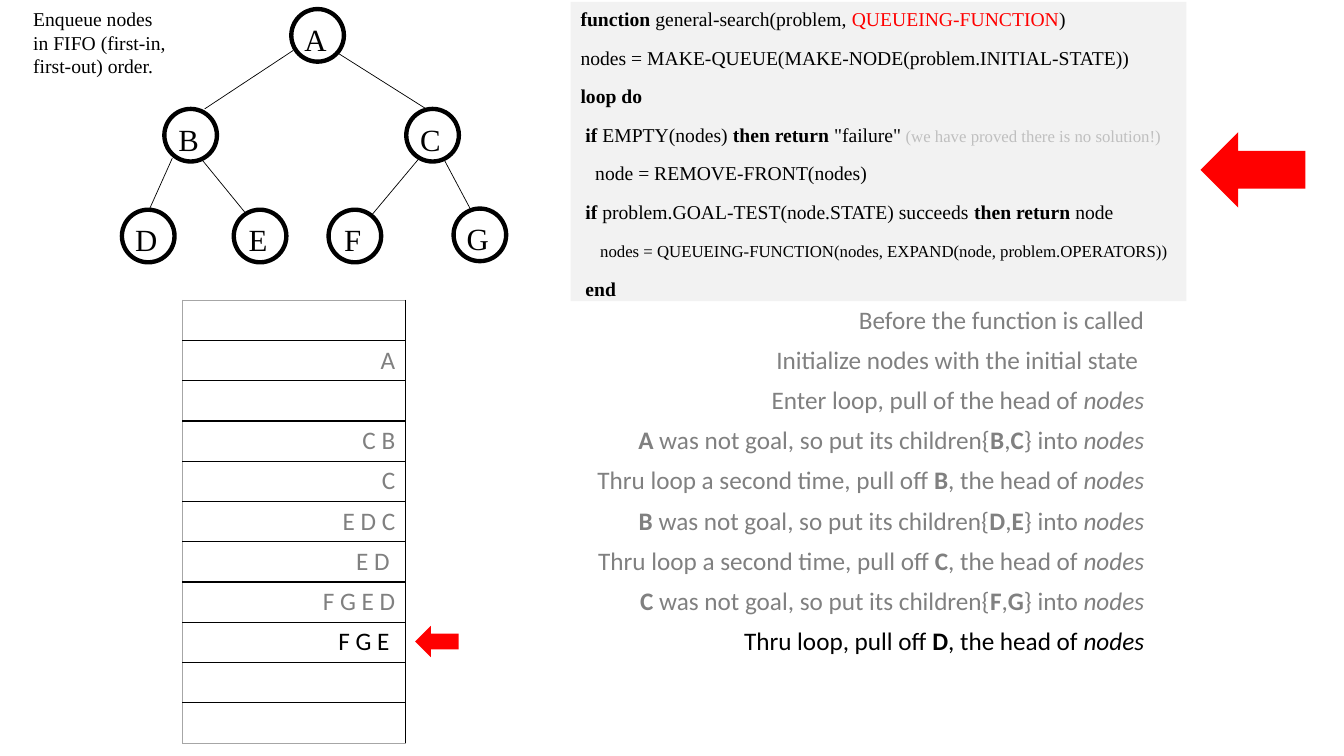
from dataclasses import dataclass
from typing import Any, NamedTuple, Optional

from lxml.etree import SubElement
from pptx import Presentation
from pptx.dml.color import RGBColor as Color
from pptx.enum.shapes import MSO_CONNECTOR as Connector, MSO_SHAPE as Preset
from pptx.enum.text import MSO_ANCHOR as Anchor, PP_ALIGN as Align
from pptx.oxml.ns import qn
from pptx.util import Pt


@dataclass(frozen=True)
class Theme:
    serif: str = "Times New Roman"
    sans: str = "Calibri"
    black: str = "000000"
    red: str = "FF0000"
    past: str = "808080"
    aside: str = "BFBFBF"
    panel: str = "F2F2F2"
    edge: str = "A6A6A6"
    node_size: float = 22
    table_size: float = 18
    code_size: float = 14
    small_size: float = 12


THEME = Theme()


class Run(NamedTuple):
    text: str
    bold: bool = False
    italic: bool = False
    color: Optional[str] = None
    size: Optional[float] = None


class Node(NamedTuple):
    letter: str
    left: float
    top: float


class Edge(NamedTuple):
    start: tuple[float, float]
    end: tuple[float, float]


class CodeLine(NamedTuple):
    indent: float
    runs: list[Run]


class Step(NamedTuple):
    queue: str = ""
    note: tuple[Run, ...] = ()
    color: str = THEME.past


class Arrow(NamedTuple):
    left: float
    top: float
    width: float
    height: float


HEAD = Run("nodes", italic=True)


def expanded(parent: str, first: str, second: str) -> tuple[Run, ...]:
    return (Run(parent, True), Run(" was not goal, so put its children{"),
            Run(first, True), Run(","), Run(second, True), Run("} into "), HEAD)


def pulled(lead: str, letter: str) -> tuple[Run, ...]:
    return Run(f"{lead}, pull off "), Run(letter, True), Run(", the head of "), HEAD


NODES = [Node("A", 208.1, 6.5), Node("B", 117.4, 77.8), Node("C", 290.2, 77.8),
         Node("D", 87.1, 149.8), Node("E", 167, 149.8), Node("F", 234.7, 149.8),
         Node("G", 324, 149)]
NODE_DIAMETER = 37.6

EDGES = [Edge((209.5, 36), (146.2, 77.8)), Edge((240.5, 37.4), (306.7, 79.2)),
         Edge((123.1, 113), (106.6, 149.8)), Edge((144, 113.8), (175.7, 152.6)),
         Edge((299.5, 113), (265.7, 153.4)), Edge((317.5, 114.5), (337, 151.2))]

CODE = [
    CodeLine(0, [Run("function", True), Run(" general-search(problem, "),
                 Run("QUEUEING-FUNCTION", color=THEME.red), Run(")")]),
    CodeLine(0, [Run("nodes = MAKE-QUEUE(MAKE-NODE(problem.INITIAL-STATE))")]),
    CodeLine(0, [Run("loop do", True)]),
    CodeLine(3.5, [Run("if", True), Run(" EMPTY(nodes) "), Run("then return", True),
                   Run(' "failure"'), Run(" ", size=THEME.small_size),
                   Run("(we have proved there is no solution!)",
                       color=THEME.aside, size=THEME.small_size)]),
    CodeLine(10.5, [Run("node = REMOVE-FRONT(nodes)")]),
    CodeLine(3.5, [Run("if ", True), Run("problem.GOAL-TEST(node.STATE) succeeds "),
                   Run("then return", True), Run(" node")]),
    CodeLine(14, [Run("nodes = QUEUEING-FUNCTION(nodes, EXPAND(node, problem.OPERATORS))",
                      size=THEME.small_size), Run(" ")]),
    CodeLine(3.5, [Run("end", True)]),
]

STEPS = [
    Step("", (Run("Before the function is called"),)),
    Step("A", (Run("Initialize nodes with the initial state "),)),
    Step("", (Run("Enter loop, pull of the head of "), HEAD)),
    Step("C B", expanded("A", "B", "C")),
    Step("C", pulled("Thru loop a second time", "B")),
    Step("E D C", expanded("B", "D", "E")),
    Step("E D ", pulled("Thru loop a second time", "C")),
    Step("F G E D", expanded("C", "F", "G")),
    Step("F G E ", pulled("Thru loop", "D"), THEME.black),
    Step(),
    Step(),
]
COLUMN_WIDTHS = (159, 535)
ROW_HEIGHT = 28.77

ARROWS = [Arrow(296.6, 447.1, 31, 22.3), Arrow(857.5, 94.3, 74.9, 54)]


def apply_format(target: Any, values: dict[str, Any]) -> None:
    for name, value in values.items():
        setattr(target, name, value)


def insets(left: float, top: float, right: float, bottom: float) -> dict[str, Any]:
    return {"margin_left": Pt(left), "margin_top": Pt(top),
            "margin_right": Pt(right), "margin_bottom": Pt(bottom)}


def write_runs(paragraph: Any, runs: Any, font: str, size: float, color: str) -> None:
    for item in runs:
        run = paragraph.add_run()
        run.text = item.text
        apply_format(run.font, {"name": font, "size": Pt(item.size or size),
                                "bold": item.bold, "italic": item.italic})
        run.font.color.rgb = Color.from_string(item.color or color)


def add_preset(slide: Any, preset: Any, box: tuple[float, ...], fill: Optional[str] = None) -> Any:
    shape = slide.shapes.add_shape(preset, *map(Pt, box))
    shape.shadow.inherit = False
    shape.line.fill.background()
    if fill:
        shape.fill.solid()
        shape.fill.fore_color.rgb = Color.from_string(fill)
    else:
        shape.fill.background()
    return shape


def add_node(slide: Any, node: Node) -> None:
    shape = add_preset(slide, Preset.OVAL, (node.left, node.top, NODE_DIAMETER, NODE_DIAMETER))
    shape.line.color.rgb = Color.from_string(THEME.black)
    shape.line.width = Pt(3.13)
    apply_format(shape.text_frame, {"word_wrap": False, "vertical_anchor": Anchor.MIDDLE,
                                    **insets(0, 5, 3, 0)})
    paragraph = shape.text_frame.paragraphs[0]
    paragraph.alignment = Align.CENTER
    write_runs(paragraph, [Run(node.letter)], THEME.serif, THEME.node_size, THEME.black)


def add_edge(slide: Any, edge: Edge) -> None:
    line = slide.shapes.add_connector(Connector.STRAIGHT, *map(Pt, edge.start + edge.end))
    line.line.color.rgb = Color.from_string(THEME.black)
    line.line.width = Pt(0.5)
    SubElement(line._element.spPr, qn("a:effectLst"))


def add_code(slide: Any, lines: list[CodeLine]) -> None:
    panel = add_preset(slide, Preset.RECTANGLE, (407.6, 1.4, 439.9, 213.8), THEME.panel)
    frame = panel.text_frame
    apply_format(frame, {"word_wrap": True, "vertical_anchor": Anchor.TOP})
    for index, line in enumerate(lines):
        paragraph = frame.add_paragraph() if index else frame.paragraphs[0]
        apply_format(paragraph, {"alignment": Align.LEFT, "space_before": Pt(5.35),
                                 "space_after": Pt(5.35)})
        paragraph._p.get_or_add_pPr().set("marL", str(Pt(line.indent)))
        write_runs(paragraph, line.runs, THEME.serif, THEME.code_size, THEME.black)


def set_borders(cell: Any, colors: dict[str, Optional[str]]) -> None:
    properties = cell._tc.get_or_add_tcPr()
    for side, color in colors.items():
        width = Pt(0.5 if color == THEME.edge else 1)
        line = SubElement(properties, qn(f"a:ln{side}"), w=str(width))
        if color:
            fill = SubElement(line, qn("a:solidFill"))
            SubElement(fill, qn("a:srgbClr"), val=color)
        else:
            SubElement(line, qn("a:noFill"))


def add_trace(slide: Any, steps: list[Step]) -> None:
    frame = slide.shapes.add_table(len(steps), 2, Pt(130.5), Pt(214.5),
                                   Pt(sum(COLUMN_WIDTHS)), Pt(ROW_HEIGHT * len(steps)))
    table = frame.table
    apply_format(table, {"first_row": False, "horz_banding": False})
    for column, width in zip(table.columns, COLUMN_WIDTHS):
        column.width = Pt(width)
    for index, step in enumerate(steps):
        table.rows[index].height = Pt(ROW_HEIGHT)
        top = THEME.black if index else THEME.edge
        bottom = THEME.black if index < len(steps) - 1 else THEME.edge
        queue = (Run(step.queue),) if step.queue else ()
        borders = ({"L": THEME.edge, "R": THEME.black, "T": top, "B": bottom},
                   {"L": THEME.black, "R": None, "T": None, "B": None})
        for column, runs in enumerate((queue, step.note)):
            cell = table.cell(index, column)
            apply_format(cell, insets(7.2, 3.4, 7.2, 3.4))
            set_borders(cell, borders[column])
            cell.fill.background()
            paragraph = cell.text_frame.paragraphs[0]
            paragraph.alignment = Align.RIGHT
            write_runs(paragraph, runs, THEME.sans, THEME.table_size, step.color)


def add_caption(slide: Any, text: str) -> None:
    box = slide.shapes.add_textbox(Pt(16.6), Pt(1.4), Pt(113.8), Pt(58.3))
    box.text_frame.word_wrap = True
    write_runs(box.text_frame.paragraphs[0], [Run(text)], THEME.serif,
               THEME.code_size, THEME.black)


def main() -> None:
    presentation = Presentation()
    apply_format(presentation, {"slide_width": Pt(960), "slide_height": Pt(540)})
    slide = presentation.slides.add_slide(presentation.slide_layouts[6])
    for node in NODES:
        add_node(slide, node)
    for edge in EDGES:
        add_edge(slide, edge)
    add_code(slide, CODE)
    add_trace(slide, STEPS)
    add_caption(slide, "Enqueue nodes in FIFO (first-in, first-out) order.")
    for arrow in ARROWS:
        add_preset(slide, Preset.LEFT_ARROW, arrow, THEME.red)
    presentation.save("out.pptx")


if __name__ == "__main__":
    main()
